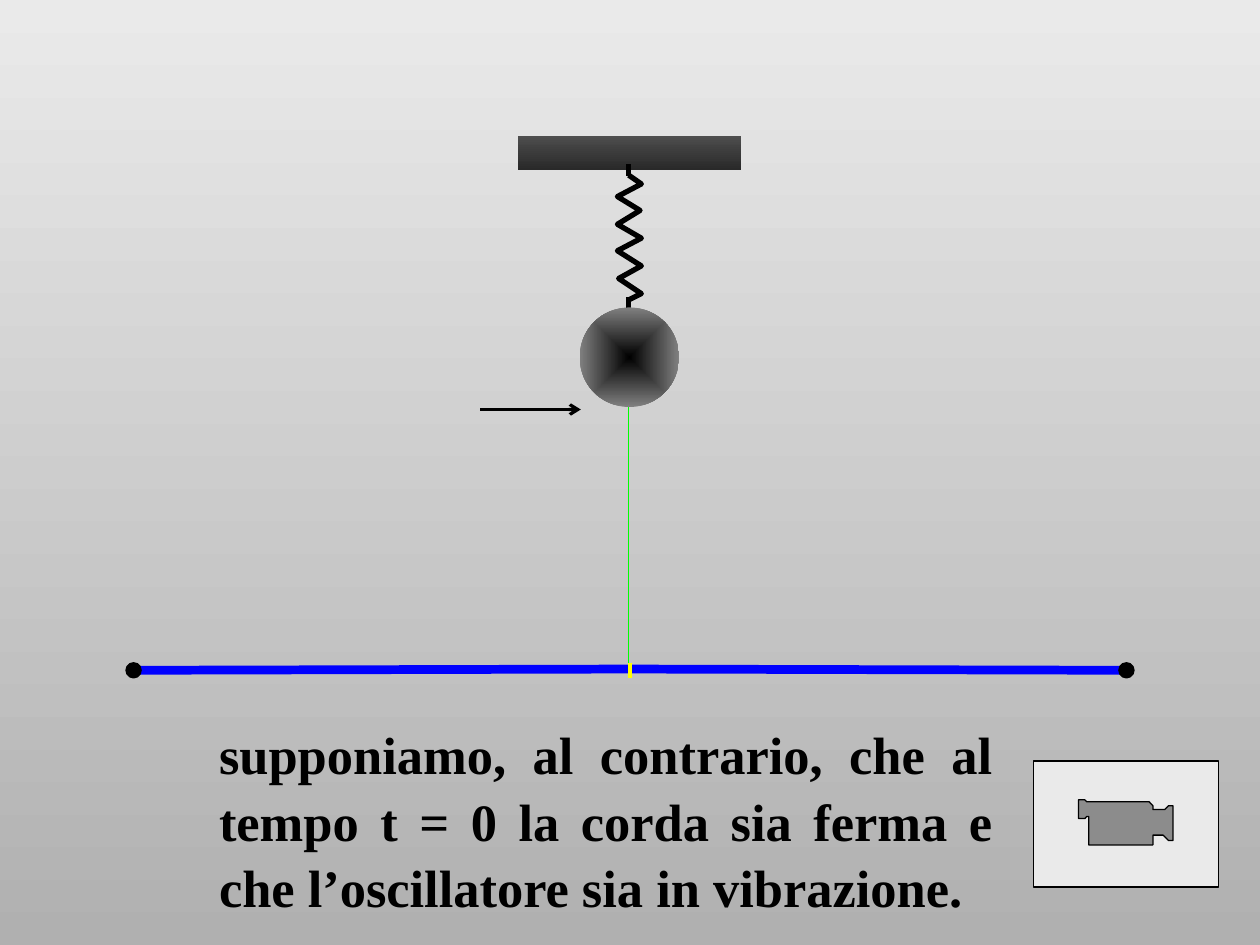
"""Builds the slide of an oscillator above a string at rest."""
import pptx
import pptx.dml.color
import pptx.enum.shapes
import pptx.enum.text
import pptx.oxml
import pptx.oxml.ns
import pptx.util
from pptx.util import Inches

COLORS = {
    "black": "000000", "string": "0000FF", "thread": "00FF00", "mark": "FFFF00",
    "pale": "EAEAEA", "floor": "B0B0B0", "ball_rim": "808080",
    "bar_top": "4D4D4D", "bar_bottom": "292929",
}
RGB = {name: pptx.dml.color.RGBColor.from_string(code) for name, code in COLORS.items()}
SHAPE = pptx.enum.shapes.MSO_SHAPE
qn = pptx.oxml.ns.qn
NS = pptx.oxml.ns.nsdecls("a")

deck = pptx.Presentation()
deck.slide_width, deck.slide_height = Inches(10), Inches(7.5)
slide = deck.slides.add_slide(deck.slide_layouts[6])
shapes = slide.shapes


def add_text(text, left, top, width, height, size, color, font, bold, align, spacing):
    box = shapes.add_textbox(Inches(left), Inches(top), Inches(width), Inches(height))
    box.text_frame.word_wrap = True
    paragraph = box.text_frame.paragraphs[0]
    paragraph.text = text
    paragraph.alignment = align
    paragraph.line_spacing = spacing
    paragraph.font.size = pptx.util.Pt(size)
    paragraph.font.name = font
    paragraph.font.bold = bold
    paragraph.font.color.rgb = RGB[color]


def add_line(start, end, color, weight):
    line = shapes.add_connector(
        pptx.enum.shapes.MSO_CONNECTOR.STRAIGHT, *map(Inches, start + end))
    line.line.color.rgb = RGB[color]
    line.line.width = pptx.util.Pt(weight)
    line.element.spPr.append(pptx.oxml.parse_xml(f"<a:effectLst {NS}/>"))
    return line


add_text(
    "supponiamo, al contrario, che al tempo t = 0 la corda sia ferma e "
    "che l’oscillatore sia in vibrazione.",
    left=1.64, top=5.66, width=6.34, height=1.6, size=30, color="black",
    font="Times New Roman", bold=True,
    align=pptx.enum.text.PP_ALIGN.JUSTIFY, spacing=1.05)

axis = 4.99
string_points = [(1.06, 5.32), (axis, 5.31), (8.93, 5.32)]
spring_points = [
    (axis, 1.39), (5.09, 1.46), (4.9, 1.56), (5.08, 1.67), (4.9, 1.78), (5.09, 1.89),
    (4.9, 1.99), (5.09, 2.11), (4.91, 2.21), (5.09, 2.33), (axis, 2.38)]
curves = []
for points, color, weight in [(string_points, "string", 5), (spring_points, "black", 3)]:
    first, *rest = [(Inches(x), Inches(y)) for x, y in points]
    builder = shapes.build_freeform(*first)
    builder.add_line_segments(rest, close=False)
    curve = builder.convert_to_shape()
    curve.shadow.inherit = False
    curve.fill.background()
    curve.line.color.rgb = RGB[color]
    curve.line.width = pptx.util.Pt(weight)
    curves.append(curve)

add_line((axis, 2.56), (axis, 5.36), "thread", 0.75)
add_line((5, 5.26), (5, 5.38), "mark", 2.25)
add_line((axis, 2.36), (axis, 2.66), "black", 3)

solids = []
for kind, left, top, width, height, color in [
    (SHAPE.OVAL, 1, 5.26, 0.12, 0.12, "black"),
    (SHAPE.OVAL, 8.88, 5.26, 0.12, 0.12, "black"),
    (SHAPE.ACTION_BUTTON_MOVIE, 8.2, 6.04, 1.47, 1, "pale"),
    (SHAPE.OVAL, 4.6, 2.44, 0.79, 0.79, None),
    (SHAPE.RECTANGLE, 4.11, 1.08, 1.77, 0.27, None),
]:
    solid = shapes.add_shape(kind, *map(Inches, (left, top, width, height)))
    solid.shadow.inherit = False
    if color:
        solid.fill.solid()
        solid.fill.fore_color.rgb = RGB[color]
        solid.line.color.rgb = RGB["black"]
        solid.line.width = pptx.util.Pt(0.75)
    else:
        solid.line.fill.background()
    solids.append(solid)
ball, bar = solids[-2:]

for fill, start, end in [
    (slide.background.fill, "pale", "floor"),
    (bar.fill, "bar_top", "bar_bottom"),
    (ball.fill, "black", "ball_rim"),
]:
    fill.gradient()
    fill.gradient_angle = 270
    for stop, color, position in zip(fill.gradient_stops, (start, end), (0, 1)):
        stop.color.rgb = RGB[color]
        stop.position = position

ball_gradient = ball.element.spPr.find(qn("a:gradFill"))
ball_gradient.replace(ball_gradient.find(qn("a:lin")), pptx.oxml.parse_xml(
    f'<a:path {NS} path="shape">'
    '<a:fillToRect l="50000" t="50000" r="50000" b="50000"/></a:path>'))

add_line((axis, 1.3), (axis, 1.4), "black", 3)
arrow = add_line((3.81, 3.25), (4.61, 3.25), "black", 1.75)
arrow.element.spPr.find(qn("a:ln")).append(
    pptx.oxml.parse_xml(f'<a:tailEnd {NS} type="arrow"/>'))

deck.save("out.pptx")
